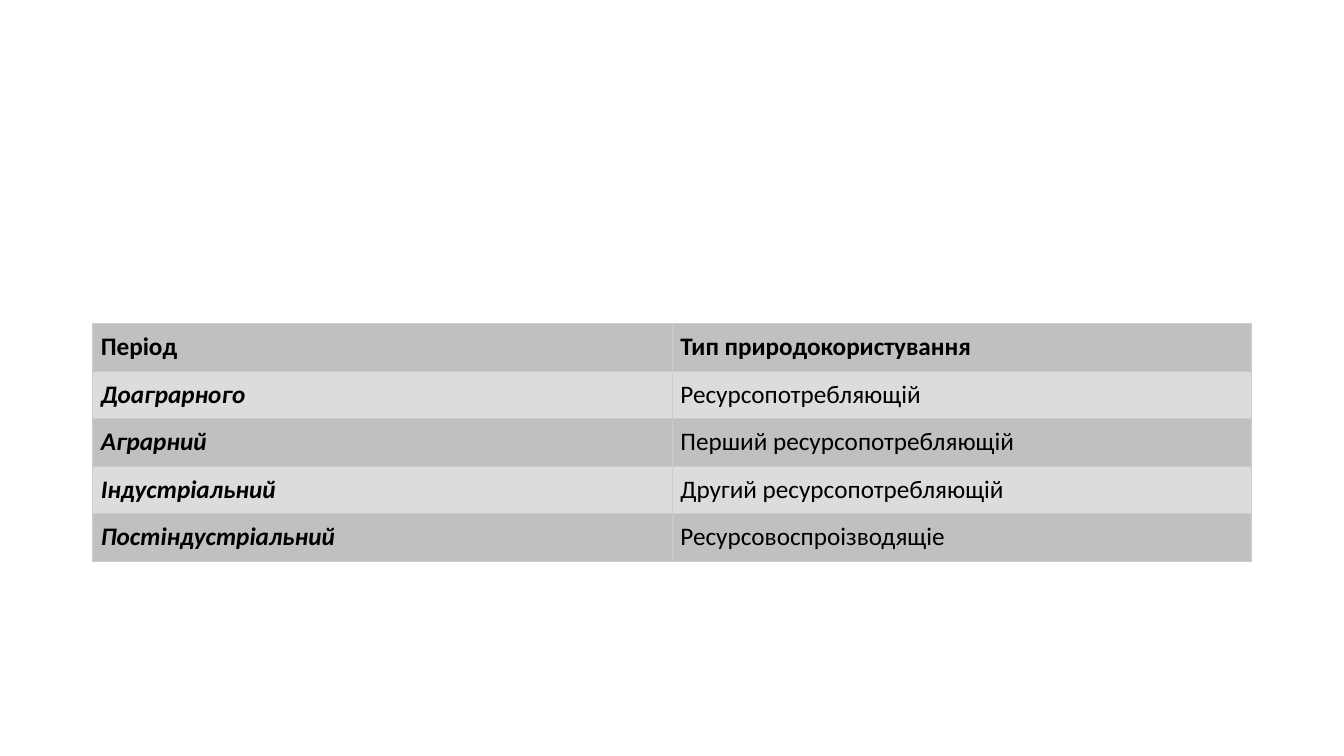
from dataclasses import dataclass

from lxml.etree import SubElement
from pptx import Presentation
from pptx.dml.color import RGBColor as Color
from pptx.enum.text import MSO_ANCHOR as Anchor
from pptx.oxml.ns import qn
from pptx.util import Inches, Pt


@dataclass(frozen=True)
class Theme:
    font: str = "Calibri"
    text_size: float = 18
    text: str = "000000"
    bands: tuple = ("C0C0C0", "DCDCDC")
    border: str = "CCCCCC"
    border_width: float = 0.6


class SlideBuilder:
    """Places elements on a grid of 160 columns by 90 rows."""

    def __init__(self, presentation, theme):
        self.theme = theme
        self.column = presentation.slide_width / 160
        self.row = presentation.slide_height / 90
        self.slide = presentation.slides.add_slide(presentation.slide_layouts[6])

    def table(self, records, left, top, width, row_height):
        frame = self.slide.shapes.add_table(
            len(records), len(records[0]),
            round(left * self.column), round(top * self.row),
            round(width * self.column), round(len(records) * row_height * self.row))
        for row_index, record in enumerate(records):
            for column_index, text in enumerate(record):
                is_header, is_label = row_index == 0, column_index == 0
                self.cell(frame.table.cell(row_index, column_index), text,
                          fill=self.theme.bands[row_index % 2],
                          bold=is_header or is_label,
                          italic=is_label and not is_header)

    def cell(self, cell, text, fill, bold, italic):
        inset = round(self.column)
        cell_format = {"margin_left": inset, "margin_right": inset,
                       "margin_top": inset, "margin_bottom": inset,
                       "vertical_anchor": Anchor.MIDDLE}
        for name, value in cell_format.items():
            setattr(cell, name, value)

        run = cell.text_frame.paragraphs[0].add_run()
        run.text = text
        font_format = {"name": self.theme.font, "size": Pt(self.theme.text_size),
                       "bold": bold, "italic": italic}
        for name, value in font_format.items():
            setattr(run.font, name, value)
        run.font.color.rgb = Color.from_string(self.theme.text)

        # Borders come before the fill in the cell properties
        self.borders(cell)
        cell.fill.solid()
        cell.fill.fore_color.rgb = Color.from_string(fill)

    def borders(self, cell):
        properties = cell._tc.get_or_add_tcPr()
        for side in ("a:lnL", "a:lnR", "a:lnT", "a:lnB"):
            line = SubElement(properties, qn(side), w=str(Pt(self.theme.border_width)))
            solid = SubElement(line, qn("a:solidFill"))
            SubElement(solid, qn("a:srgbClr"), val=self.theme.border)


def main():
    presentation = Presentation()
    presentation.slide_width = Inches(13.33)
    presentation.slide_height = Inches(7.5)
    builder = SlideBuilder(presentation, Theme())

    # Periods and their types of resource use
    periods = [
        ("Період", "Тип природокористування"),
        ("Доаграрного", "Ресурсопотребляющій"),
        ("Аграрний", "Перший ресурсопотребляющій"),
        ("Індустріальний", "Другий ресурсопотребляющій"),
        ("Постіндустріальний", "Ресурсовоспроізводящіе"),
    ]
    builder.table(periods, left=11, top=38.5, width=138, row_height=5.66)

    presentation.save("out.pptx")


if __name__ == "__main__":
    main()
